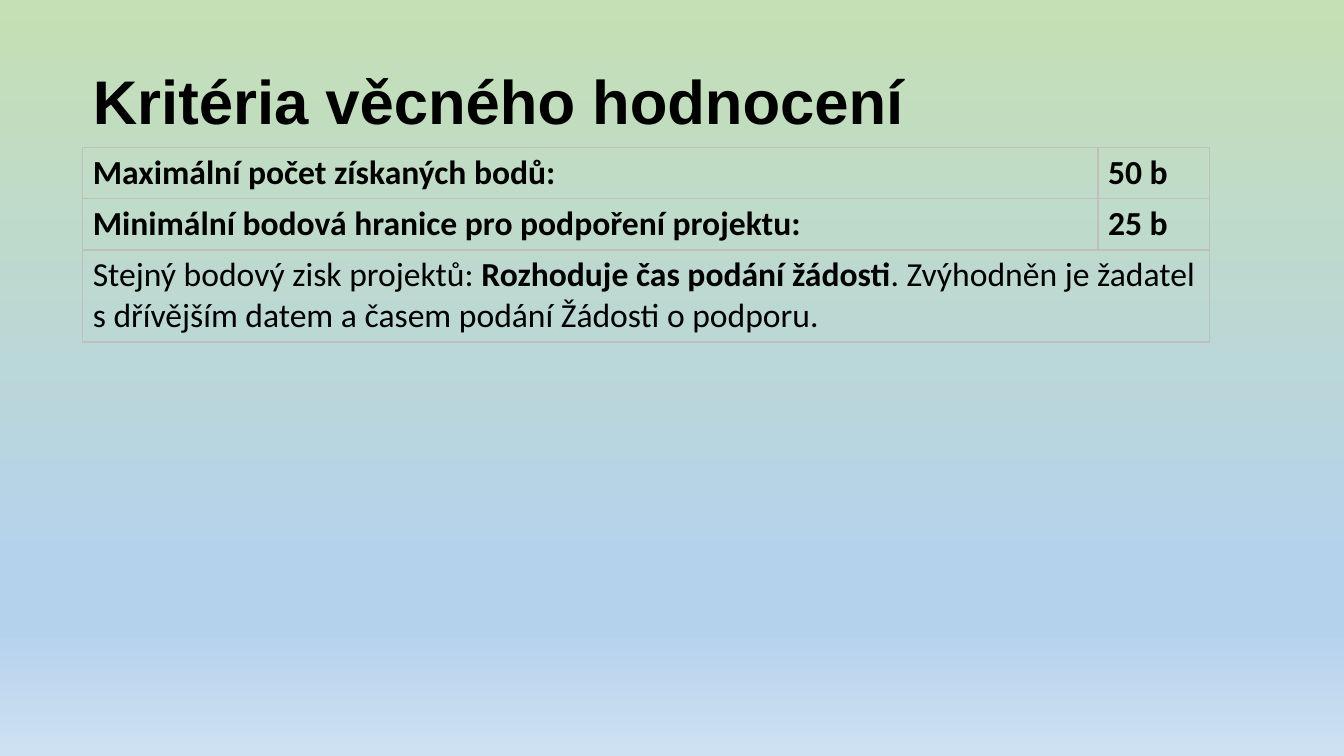
from lxml import etree
from pptx import Presentation
from pptx.dml.color import RGBColor
from pptx.enum.text import MSO_ANCHOR, PP_ALIGN
from pptx.oxml import parse_xml
from pptx.oxml.ns import nsdecls, qn
from pptx.util import Inches, Pt

BLACK = RGBColor(0x00, 0x00, 0x00)
BORDER = RGBColor(0xBF, 0xBF, 0xBF)
GREEN = RGBColor(0xC5, 0xE0, 0xB4)
BLUE = RGBColor(0xB5, 0xD2, 0xEC)
PALE_BLUE = RGBColor(0xCE, 0xE1, 0xF2)

BACKGROUND = [(0, GREEN), (74, BLUE), (83, BLUE), (100, PALE_BLUE)]
TITLE = "Kritéria věcného hodnocení"
# Each cell is a list of (text, bold) runs; a single cell spans the row
CRITERIA = [
    [[("Maximální počet získaných bodů:", True)], [("50 b", True)]],
    [[("Minimální bodová hranice pro podpoření projektu:", True)], [("25 b", True)]],
    [[("Stejný bodový zisk projektů: ", False),
      ("Rozhoduje čas podání žádosti", True),
      (". Zvýhodněn je žadatel s dřívějším datem a časem podání Žádosti o podporu.", False)]],
]
COL_WIDTHS = [10.07, 1.11]
ROW_HEIGHTS = [0.51, 0.51, 0.91]
LEFT, TABLE_TOP = 0.82, 1.46

TITLE_FONT = {"name": "Arial", "size": Pt(44), "bold": True}
CELL_FONT = {"name": "Calibri", "size": Pt(24)}


def add_run(p, text, font):
    r = p.add_run()
    r.text = text
    for name, value in font.items():
        setattr(r.font, name, value)
    r.font.color.rgb = BLACK


def set_background(slide, stops):
    fill = slide.background.fill
    fill.gradient()
    fill.gradient_angle = 270  # counter-clockwise: top to bottom
    gs_list = next(slide.element.iter(qn("a:gsLst")))
    for gs in list(gs_list):
        gs_list.remove(gs)
    for pos, color in stops:
        gs = etree.SubElement(gs_list, qn("a:gs"), pos=str(pos * 1000))
        etree.SubElement(gs, qn("a:srgbClr"), val=str(color))


def set_borders(cell):
    tc_pr = cell._tc.get_or_add_tcPr()
    for i, side in enumerate(("lnL", "lnR", "lnT", "lnB")):
        tc_pr.insert(i, parse_xml(
            f'<a:{side} {nsdecls("a")} w="{Pt(1)}"><a:solidFill>'
            f'<a:srgbClr val="{BORDER}"/></a:solidFill></a:{side}>'))


def add_title(slide):
    title = slide.shapes.title
    title.left, title.top = Inches(LEFT), Inches(0.31)
    title.width, title.height = Inches(11.5), Inches(1.45)
    tf = title.text_frame
    tf.word_wrap = True
    tf.vertical_anchor = MSO_ANCHOR.MIDDLE
    p = tf.paragraphs[0]
    p.alignment = PP_ALIGN.LEFT
    p.line_spacing = 0.9
    add_run(p, TITLE, TITLE_FONT)


def add_criteria_table(slide):
    table = slide.shapes.add_table(
        len(CRITERIA), len(COL_WIDTHS), Inches(LEFT), Inches(TABLE_TOP),
        Inches(sum(COL_WIDTHS)), Inches(sum(ROW_HEIGHTS))).table
    table.first_row = table.horz_banding = False
    for column, width in zip(table.columns, COL_WIDTHS):
        column.width = Inches(width)
    for row, height in zip(table.rows, ROW_HEIGHTS):
        row.height = Inches(height)
    for cell in table.iter_cells():
        cell.fill.background()
        cell.vertical_anchor = MSO_ANCHOR.MIDDLE
        set_borders(cell)
    for i, row in enumerate(CRITERIA):
        if len(row) == 1:
            table.cell(i, 0).merge(table.cell(i, len(COL_WIDTHS) - 1))
        for j, runs in enumerate(row):
            p = table.cell(i, j).text_frame.paragraphs[0]
            for text, bold in runs:
                add_run(p, text, {**CELL_FONT, "bold": bold})


def main():
    prs = Presentation()
    prs.slide_width, prs.slide_height = Inches(13.33), Inches(7.5)
    slide = prs.slides.add_slide(prs.slide_layouts[5])
    set_background(slide, BACKGROUND)
    add_title(slide)
    add_criteria_table(slide)
    prs.save("out.pptx")


if __name__ == "__main__":
    main()
